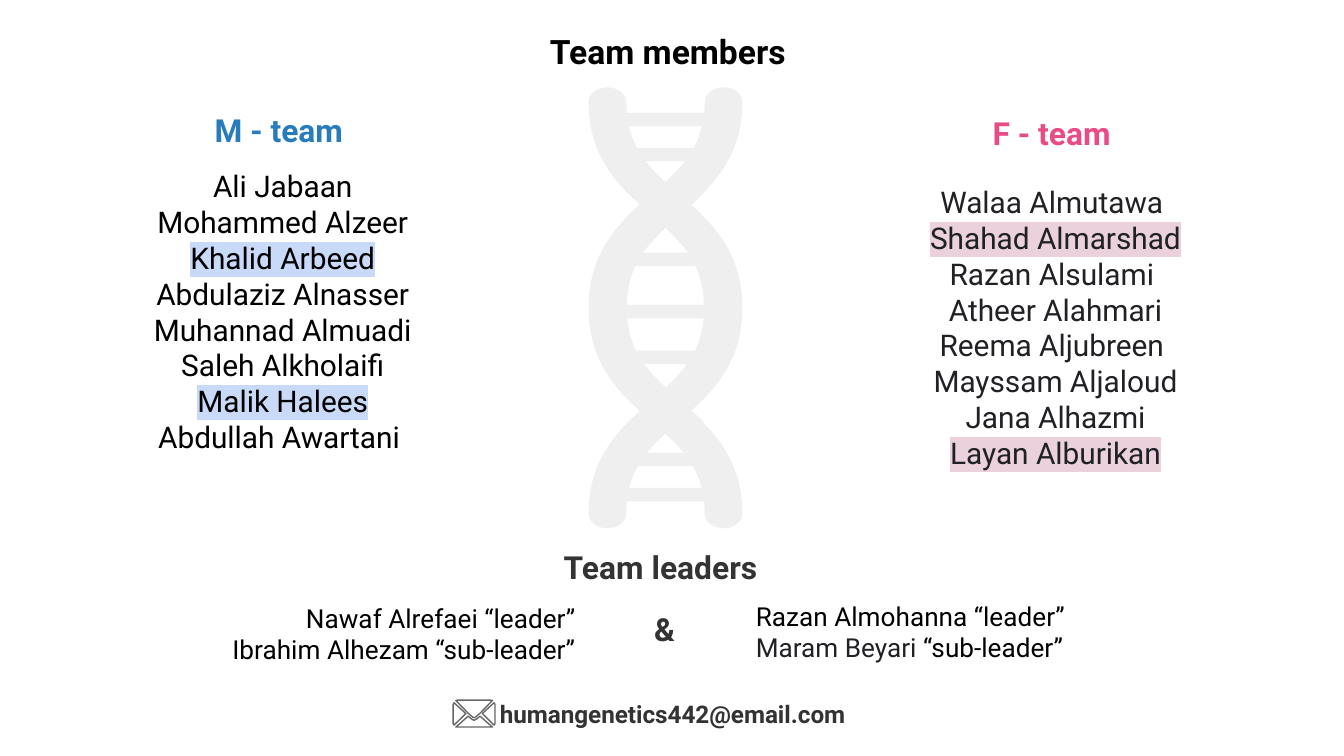
from lxml.etree import SubElement
from pptx import Presentation
from pptx.dml.color import RGBColor
from pptx.enum.text import MSO_ANCHOR as Anchor, MSO_AUTO_SIZE as AutoSize, PP_ALIGN as Align
from pptx.oxml import parse_xml
from pptx.oxml.ns import qn
from pptx.util import Pt

FONT = "Roboto"
BLACK, DARK, INK = "000000", "333333", "202124"
BLUE, PINK = "287CBC", "E94B86"
HELIX_GREY, WHITE, ENVELOPE_LINE = "EFEFEF", "FFFFFF", "666666"
DRAWING_NS = "http://schemas.openxmlformats.org/drawingml/2006/main"
HEADING_HEIGHT = 17.3
COLUMN_WIDTH = 234


def color(hex_text):
    return RGBColor.from_string(hex_text)


def style_run(run, size, hex_text, bold=False):
    run.font.name = FONT
    run.font.size = Pt(size)
    run.font.bold = bold
    run.font.color.rgb = color(hex_text)


def highlight(run, hex_text):
    mark = parse_xml(f'<a:highlight xmlns:a="{DRAWING_NS}"><a:srgbClr val="{hex_text}"/></a:highlight>')
    run.font._element.find(qn("a:solidFill")).addnext(mark)


def write_text(shape, lines, size, hex_text, bold=False, align=Align.CENTER, anchor=Anchor.MIDDLE):
    frame = shape.text_frame
    frame.word_wrap = True
    frame.auto_size = AutoSize.NONE
    frame.vertical_anchor = anchor
    frame.margin_left = frame.margin_right = frame.margin_top = frame.margin_bottom = Pt(7.2)
    frame.text = "\n".join(lines)
    for paragraph in frame.paragraphs:
        paragraph.alignment = align
        for run in paragraph.runs:
            style_run(run, size, hex_text, bold)


def place(shape, left, top, width, height):
    shape.left, shape.top, shape.width, shape.height = Pt(left), Pt(top), Pt(width), Pt(height)


def add_text(slide, box, lines, size, hex_text, **options):
    shape = slide.shapes.add_textbox(*(Pt(length) for length in box))
    write_text(shape, lines, size, hex_text, **options)
    return shape


def add_title(slide, box):
    place(slide.shapes.title, *box)
    write_text(slide.shapes.title, ["Team members "], 18, BLACK, bold=True, anchor=Anchor.TOP)


def add_team(slide, left, top, heading, heading_color, placeholder, list_gap, names, name_color, marked, mark_color):
    """Heading over a centred list of names, some of them highlighted."""
    add_text(slide, (left, top, COLUMN_WIDTH, HEADING_HEIGHT), [heading], 17, heading_color, bold=True)
    place(placeholder, left + 2.1, top + list_gap, COLUMN_WIDTH, 194.4)
    write_text(placeholder, names, 16, name_color)
    for paragraph in placeholder.text_frame.paragraphs:
        paragraph.space_before = Pt(0)
        properties = paragraph._p.get_or_add_pPr()
        properties.set("marL", "0")
        properties.set("indent", "0")
        SubElement(properties, qn("a:buNone"))
        if paragraph.text in marked:
            highlight(paragraph.runs[0], mark_color)


def add_leaders(slide, left, top):
    middle = left + 157.6
    add_text(slide, (middle, top, COLUMN_WIDTH, HEADING_HEIGHT), ["Team leaders "], 17, DARK, bold=True)
    add_text(slide, (left, top + 25.5, COLUMN_WIDTH, 37.4),
             ["Nawaf Alrefaei “leader”", "Ibrahim Alhezam “sub-leader”"], 14, BLACK, align=Align.RIGHT)
    right = add_text(slide, (left + 316.4, top + 24.5, 289.4, 37.4),
                     ["Razan Almohanna “leader”", "Maram Beyari"], 14, BLACK, align=Align.LEFT)
    last = right.text_frame.paragraphs[1]
    last.runs[0].font.color.rgb = color(INK)
    role = last.add_run()
    role.text = " “sub-leader”"
    style_run(role, 14, BLACK)
    add_text(slide, (middle, top + 33.1, COLUMN_WIDTH, HEADING_HEIGHT), ["&"], 17, DARK, bold=True)


def curves(points):
    """Split a chain of Bézier points into a start and segments of three points."""
    return [points[:1]] + [points[i:i + 3] for i in range(1, len(points), 3)]


def mirror(segments, width):
    return [[(width - x, y) for x, y in segment] for segment in segments]


def add_outline(group, left, top, segments, fill, line=None):
    """Draw a closed outline: one point makes a line, three points a Bézier curve."""
    vertices = [(Pt(left + x), Pt(top + y)) for segment in segments for x, y in segment]
    builder = group.shapes.build_freeform(*vertices[0])
    builder.add_line_segments(vertices[1:], close=True)
    shape = builder.convert_to_shape()
    steps = iter(list(shape._element.iter(qn("a:lnTo"))))
    for segment in segments[1:]:
        first = next(steps)
        if len(segment) == 3:
            first.tag = qn("a:cubicBezTo")
            for step in (next(steps), next(steps)):
                first.append(step[0])
                step.getparent().remove(step)
    shape.shadow.inherit = False
    shape.fill.solid()
    shape.fill.fore_color.rgb = color(fill)
    if line:
        shape.line.color.rgb = color(line)
        shape.line.width = Pt(0.75)
    else:
        shape.line.fill.background()


def rung(y, length, width):
    start, end = (width - length) / 2, (width + length) / 2
    bottom = y + 7.2
    return [[(start, y)], [(start - 6, y), (start - 6, bottom), (start, bottom)],
            [(end, bottom)], [(end + 6, bottom), (end + 6, y), (end, y)]]


def add_helix(slide, left, top):
    width, height = 82.4, 236.2
    upper_half = [
        (82.4, 118.1), (82.4, 87.1), (64.8, 71.3), (49, 57.6), (33.1, 43.9), (20.2, 32.4), (20.2, 7.9),
        (20.2, 3.6), (15.8, 0), (10.1, 0), (4.3, 0), (0, 3.6), (0, 7.9),
        (0, 38.9), (18, 54.7), (33.8, 68.4), (49, 82.1), (61.9, 93.6), (61.9, 118.1)]
    lower_half = [(x, height - y) for x, y in reversed(upper_half)]
    strand = curves(upper_half + lower_half[1:])
    lower_crossing = curves([
        (27.4, 151.9), (25.2, 151.9), (23, 152.6), (21.6, 153.4), (17.3, 156.2), (15.8, 161.3), (19.4, 164.9),
        (23.8, 169.9), (28.8, 174.2), (33.8, 178.6), (37.4, 182.2), (41, 185), (44.6, 188.6),
        (46.1, 190.1), (49, 191.5), (52.6, 191.5), (61.2, 191.5), (65.5, 183.6), (60.5, 177.8),
        (56.2, 174.2), (52.6, 170.6), (49, 167), (43.9, 163.4), (39.6, 159.1), (36, 155.5),
        (33.8, 153.4), (31, 151.9), (27.4, 151.9)])
    upper_crossing = curves([
        (56.2, 40.3), (53.3, 40.3), (49.7, 41.8), (48.2, 43.9), (43.2, 49), (38.9, 53.3), (33.8, 57.6),
        (28.1, 61.9), (23, 67), (18, 72), (13, 77.8), (18, 85.7), (26.6, 85.7),
        (29.5, 85.7), (32.4, 84.2), (34.6, 82.1), (38.9, 77), (43.9, 72.7), (49, 68.4),
        (54, 64.1), (59.8, 59), (64.1, 53.3), (67.7, 49.7), (67, 44.6), (61.9, 42.5),
        (60.5, 41), (58.3, 40.3), (56.2, 40.3)])
    rungs = [(13.7, 61.2), (32.4, 48.4), (214.6, 61.2), (195.8, 48.4), (88.6, 50.4), (141.1, 50.4), (116.6, 61.2)]
    bars = [rung(y, length, width) for y, length in rungs]
    group = slide.shapes.add_group_shape()
    for segments in [mirror(strand, width), *bars, strand, lower_crossing, upper_crossing]:
        add_outline(group, left, top, segments, HELIX_GREY)


def add_contact(slide, left, top):
    width, height = 22.4, 14.4
    bottom_flap = [
        [(14.4, 8.6)], [(21, height)], [(20.7, height), (20.5, height), (20.2, height)],
        [(2.2, height)], [(1.9, height), (1.7, height), (1.4, height)], [(8, 8.6)], [(10, 10.2)],
        [(10.4, 10.6), (10.8, 10.8), (11.2, 10.8)], [(11.6, 10.8), (12, 10.6), (12.4, 10.2)], [(14.4, 8.6)]]
    top_flap = [
        [(20.2, 0)], [(20.5, 0), (20.8, 0.1), (21, 0.2)], [(14.2, 7.2)], [(11.8, 9.2)],
        [(11.6, 9.4), (11.4, 9.4), (11.2, 9.4)], [(11, 9.4), (10.8, 9.4), (10.6, 9.2)],
        [(8.2, 7.2)], [(1.4, 0.2)], [(1.6, 0.1), (1.9, 0), (2.2, 0)]]
    side_flap = [
        [(0.5, 1.4)], [(6.8, 7.2)], [(0.5, 13.4)], [(0.3, 13.2), (0, 12.9), (0, 12.6)],
        [(0, 2.2)], [(0, 1.9), (0.2, 1.6), (0.5, 1.4)]]
    group = slide.shapes.add_group_shape()
    for segments in (bottom_flap, top_flap, mirror(side_flap, width), side_flap):
        add_outline(group, left, top, segments, WHITE, ENVELOPE_LINE)
    add_text(slide, (left + 0.4, top, COLUMN_WIDTH, height), ["humangenetics442@email.com"], 13, DARK, bold=True)


def main():
    presentation = Presentation()
    presentation.slide_width, presentation.slide_height = Pt(720), Pt(405)
    slide = presentation.slides.add_slide(presentation.slide_layouts[3])
    men_list, women_list = slide.placeholders[1], slide.placeholders[2]

    add_title(slide, (36, 9.4, 648, 26.6))
    add_helix(slide, 315.3, 46.8)
    add_team(slide, 32.4, 60.9, "M - team", BLUE, men_list, 8.6,
             ["Ali Jabaan", "Mohammed Alzeer", "Khalid Arbeed", "Abdulaziz Alnasser",
              "Muhannad Almuadi", "Saleh Alkholaifi", "Malik Halees", "Abdullah Awartani "],
             BLACK, ("Khalid Arbeed", "Malik Halees"), "C9DAF8")
    add_team(slide, 446.4, 62.6, "F - team", PINK, women_list, 15.4,
             ["Walaa Almutawa ", "Shahad Almarshad", "Razan Alsulami ", "Atheer Alahmari",
              "Reema Aljubreen ", "Mayssam Aljaloud", "Jana Alhazmi", "Layan Alburikan"],
             INK, ("Shahad Almarshad", "Layan Alburikan"), "EAD1DC")
    add_leaders(slide, 81.4, 295.2)
    add_contact(slide, 242.8, 375.1)
    presentation.save("out.pptx")


if __name__ == "__main__":
    main()
